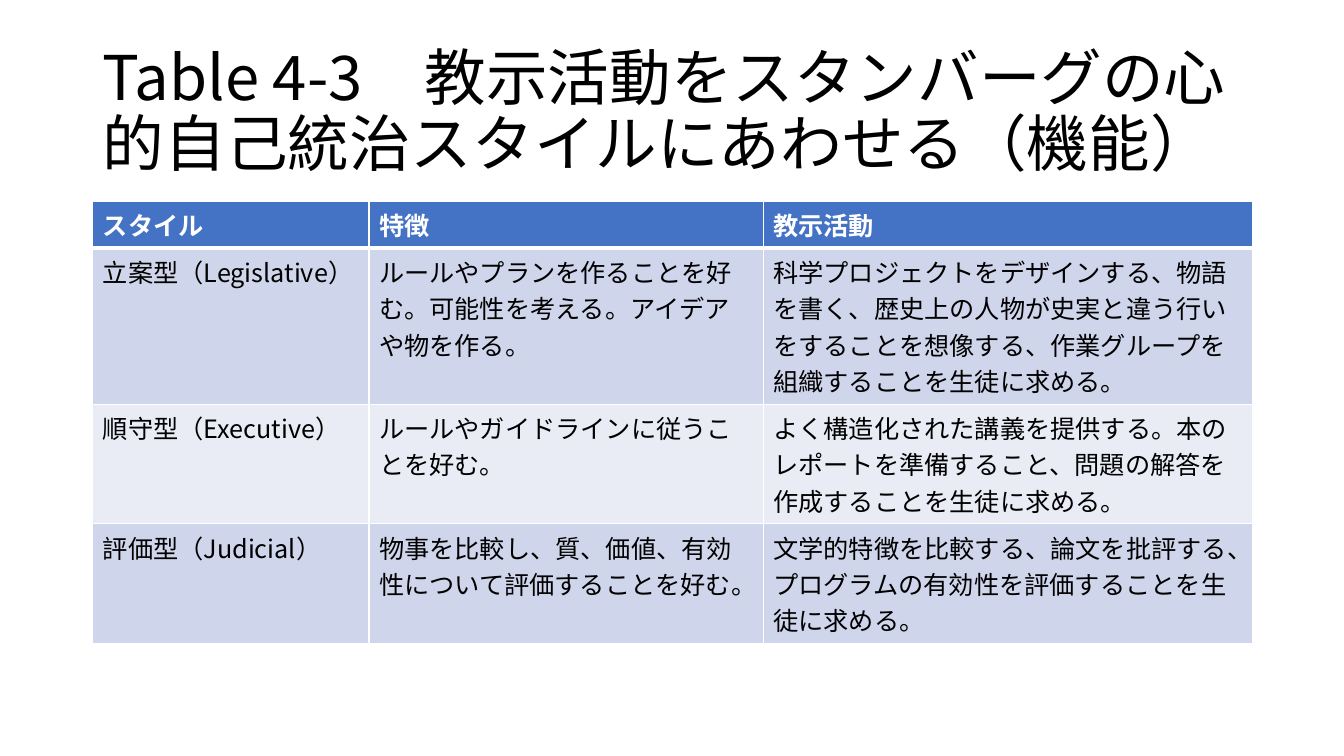
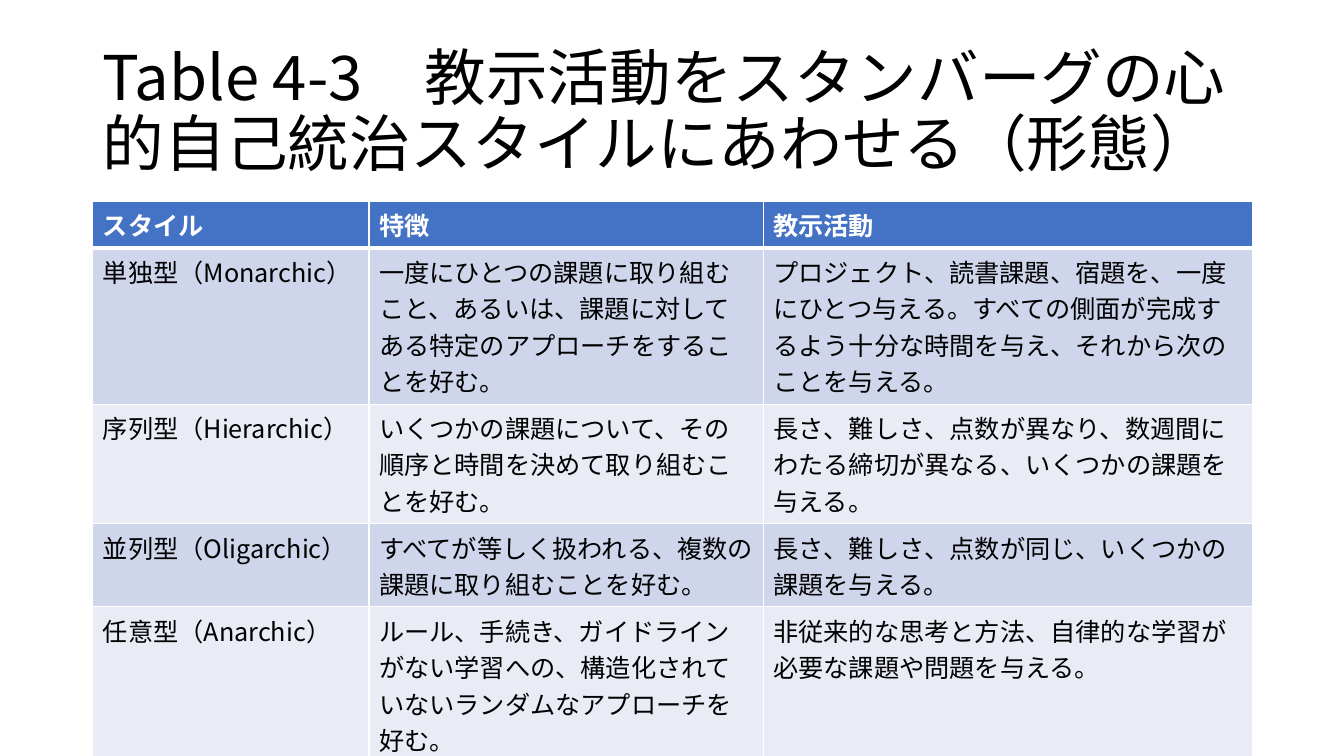
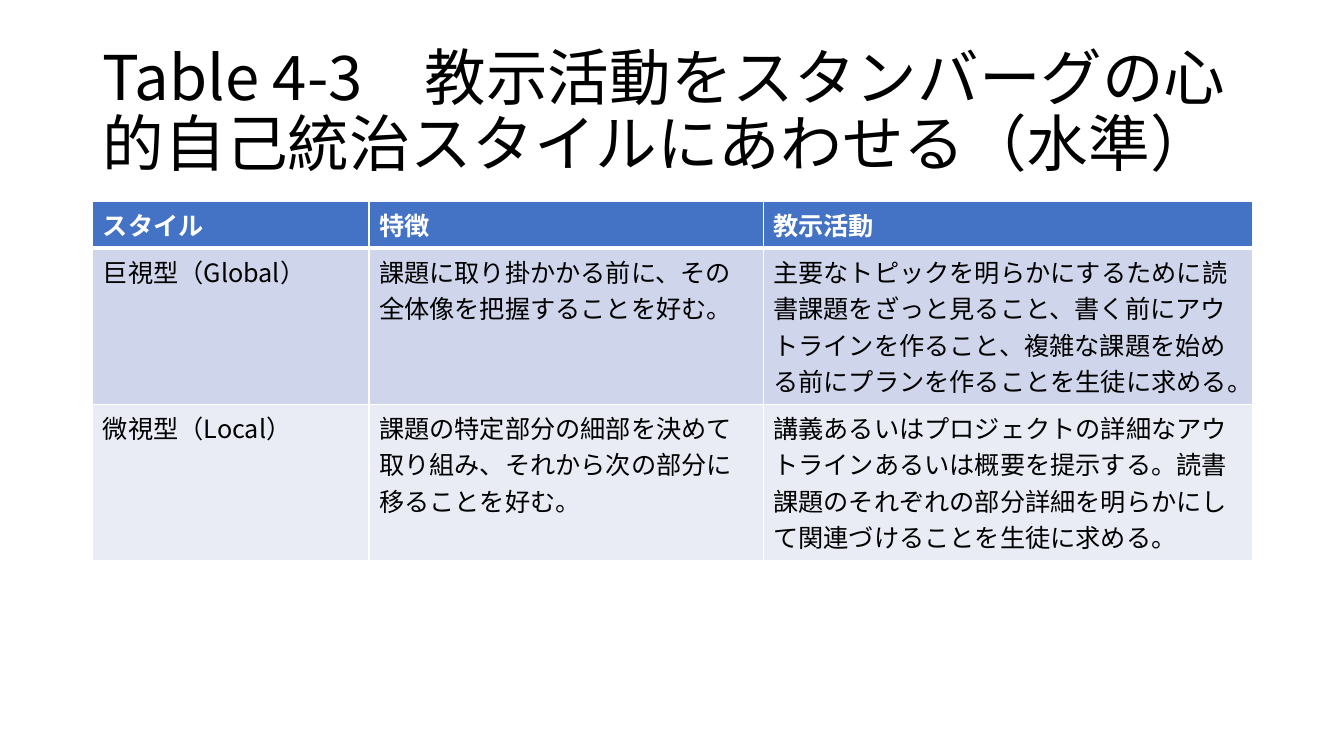
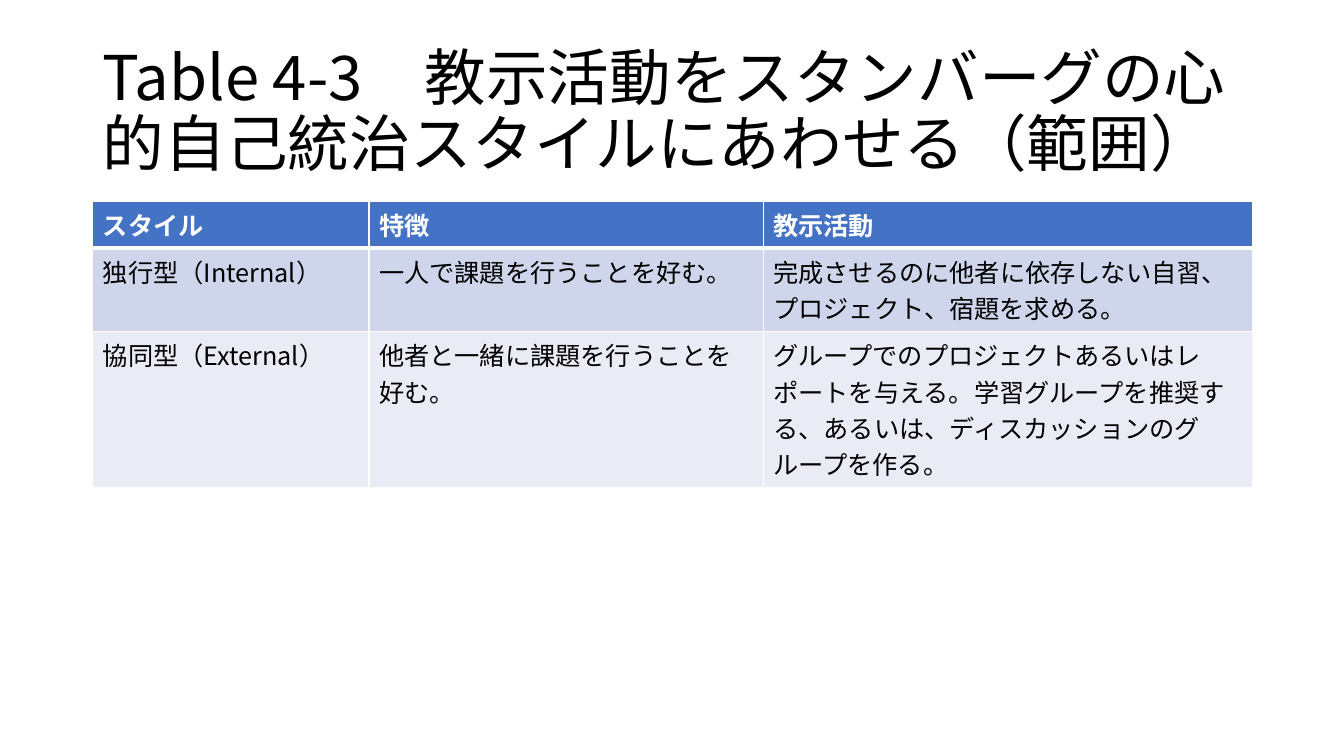
from lxml import etree
from pptx import Presentation
from pptx.dml.color import RGBColor
from pptx.enum import text
from pptx.oxml import ns
from pptx.util import Inches, Pt

FONT = "Noto Sans CJK JP"
WHITE, BLACK, BLUE = "FFFFFF", "000000", "4472C4"
BANDS = ("CFD5EA", "E9EBF5")
TITLE = "Table 4-3　教示活動をスタンバーグの心的自己統治スタイルにあわせる（{}）"
TITLE_BOX = (0.92, 0.4, 11.5, 1.45)
TABLE_CORNER = (0.92, 2)
COLUMNS = (2.74, 3.91, 4.85)
ROW_HEIGHT = 0.41
HEADER = ("スタイル", "特徴", "教示活動")

PAGES = {
    "機能": [
        ("立案型（Legislative）",
         "ルールやプランを作ることを好む。可能性を考える。アイデアや物を作る。",
         "科学プロジェクトをデザインする、物語を書く、歴史上の人物が史実と違う行いをすることを想像する、作業グループを組織することを生徒に求める。"),
        ("順守型（Executive）",
         "ルールやガイドラインに従うことを好む。",
         "よく構造化された講義を提供する。本のレポートを準備すること、問題の解答を作成することを生徒に求める。"),
        ("評価型（Judicial）",
         "物事を比較し、質、価値、有効性について評価することを好む。",
         "文学的特徴を比較する、論文を批評する、プログラムの有効性を評価することを生徒に求める。"),
    ],
    "形態": [
        ("単独型（Monarchic）",
         "一度にひとつの課題に取り組むこと、あるいは、課題に対してある特定のアプローチをすることを好む。",
         "プロジェクト、読書課題、宿題を、一度にひとつ与える。すべての側面が完成するよう十分な時間を与え、それから次のことを与える。"),
        ("序列型（Hierarchic）",
         "いくつかの課題について、その順序と時間を決めて取り組むことを好む。",
         "長さ、難しさ、点数が異なり、数週間にわたる締切が異なる、いくつかの課題を与える。"),
        ("並列型（Oligarchic）",
         "すべてが等しく扱われる、複数の課題に取り組むことを好む。",
         "長さ、難しさ、点数が同じ、いくつかの課題を与える。"),
        ("任意型（Anarchic）",
         "ルール、手続き、ガイドラインがない学習への、構造化されていないランダムなアプローチを好む。",
         "非従来的な思考と方法、自律的な学習が必要な課題や問題を与える。"),
    ],
    "水準": [
        ("巨視型（Global）",
         "課題に取り掛かかる前に、その全体像を把握することを好む。",
         "主要なトピックを明らかにするために読書課題をざっと見ること、書く前にアウトラインを作ること、複雑な課題を始める前にプランを作ることを生徒に求める。"),
        ("微視型（Local）",
         "課題の特定部分の細部を決めて取り組み、それから次の部分に移ることを好む。",
         "講義あるいはプロジェクトの詳細なアウトラインあるいは概要を提示する。読書課題のそれぞれの部分詳細を明らかにして関連づけることを生徒に求める。"),
    ],
    "範囲": [
        ("独行型（Internal）",
         "一人で課題を行うことを好む。",
         "完成させるのに他者に依存しない自習、プロジェクト、宿題を求める。"),
        ("協同型（External）",
         "他者と一緒に課題を行うことを好む。",
         "グループでのプロジェクトあるいはレポートを与える。学習グループを推奨する、あるいは、ディスカッションのグループを作る。"),
    ],
}


def paint(color_format, color):
    color_format.rgb = RGBColor.from_string(color)


def style_paragraph(para, size, color, bold=False):
    font = para.font
    font.name, font.size, font.bold = FONT, Pt(size), bold
    paint(font.color, color)
    etree.SubElement(font._element, ns.qn("a:ea"), typeface=FONT)


def add_title(page, wording, box):
    title = page.shapes.title
    title.left, title.top, title.width, title.height = map(Inches, box)
    frame = title.text_frame
    frame.text = wording
    frame.word_wrap = True
    frame.auto_size = text.MSO_AUTO_SIZE.NONE
    frame.vertical_anchor = text.MSO_ANCHOR.MIDDLE
    para = frame.paragraphs[0]
    para.alignment = text.PP_ALIGN.LEFT
    para.line_spacing = 0.9
    style_paragraph(para, 44, BLACK)


def set_borders(cell, top, bottom):
    properties = cell._tc.get_or_add_tcPr()
    widths = {"lnL": 1, "lnR": 1, "lnT": top, "lnB": bottom}
    for position, (side, width) in enumerate(widths.items()):
        line = etree.Element(ns.qn(f"a:{side}"), w=str(Pt(width)))
        fill = etree.SubElement(line, ns.qn("a:solidFill"))
        etree.SubElement(fill, ns.qn("a:srgbClr"), val=WHITE)
        properties.insert(position, line)


def fill_cell(cell, wording, row):
    header = row == 0
    cell.text = wording
    style_paragraph(cell.text_frame.paragraphs[0], 18, WHITE if header else BLACK, header)
    cell.fill.solid()
    paint(cell.fill.fore_color, BLUE if header else BANDS[(row - 1) % 2])
    set_borders(cell, 3 if row == 1 else 1, 3 if header else 1)


def add_style_table(page, rows, corner):
    left, top = corner
    frame = page.shapes.add_table(
        len(rows), len(COLUMNS), Inches(left), Inches(top),
        Inches(sum(COLUMNS)), Inches(ROW_HEIGHT * len(rows)))
    table = frame.table
    for column, width in zip(table.columns, COLUMNS):
        column.width = Inches(width)
    for row, wordings in enumerate(rows):
        table.rows[row].height = Inches(ROW_HEIGHT)
        for column, wording in enumerate(wordings):
            fill_cell(table.cell(row, column), wording, row)


def main():
    deck = Presentation()
    deck.slide_width, deck.slide_height = Inches(13.33), Inches(7.5)
    for aspect, styles in PAGES.items():
        page = deck.slides.add_slide(deck.slide_layouts[5])
        add_title(page, TITLE.format(aspect), TITLE_BOX)
        add_style_table(page, [HEADER, *styles], TABLE_CORNER)
    deck.save("out.pptx")


if __name__ == "__main__":
    main()
